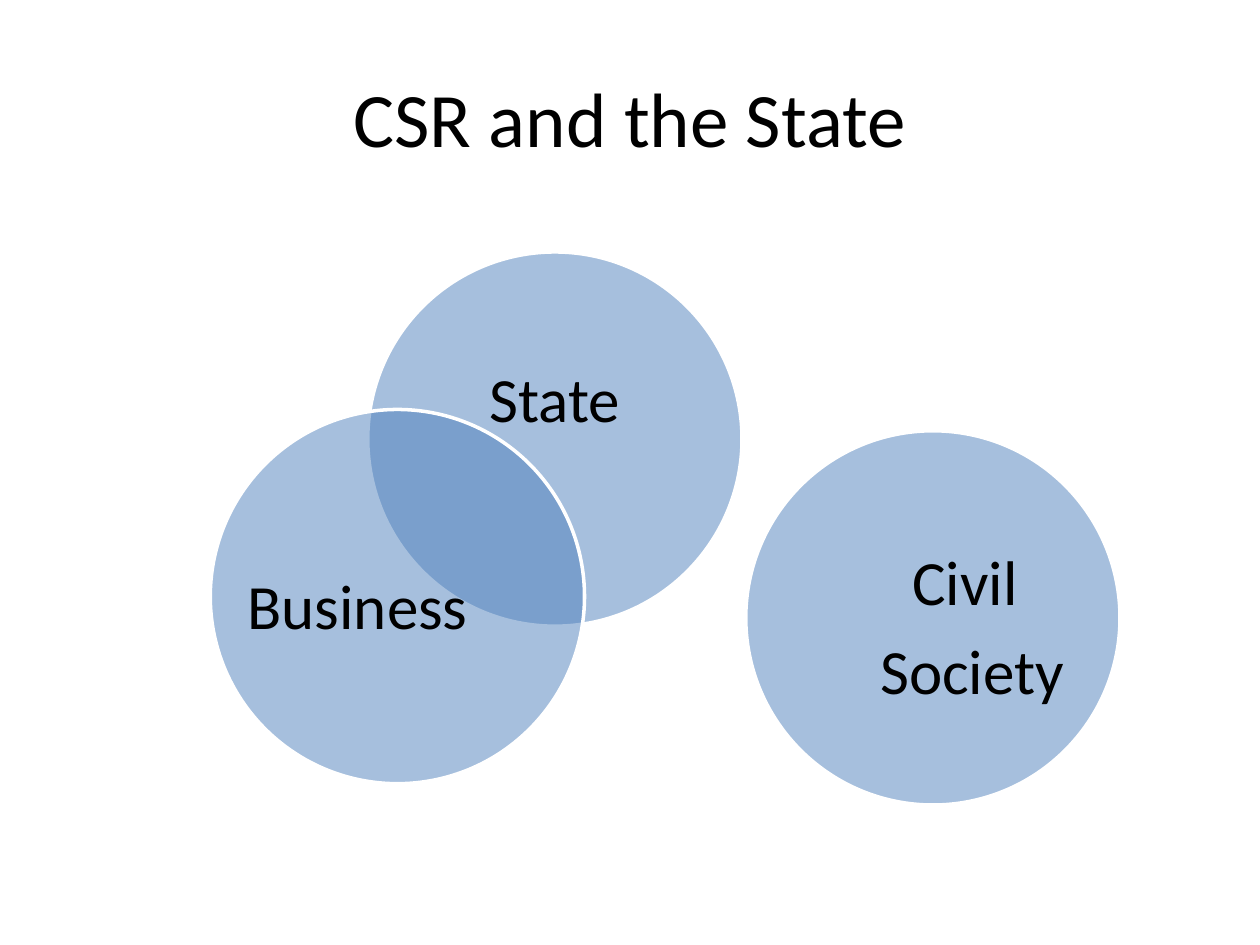
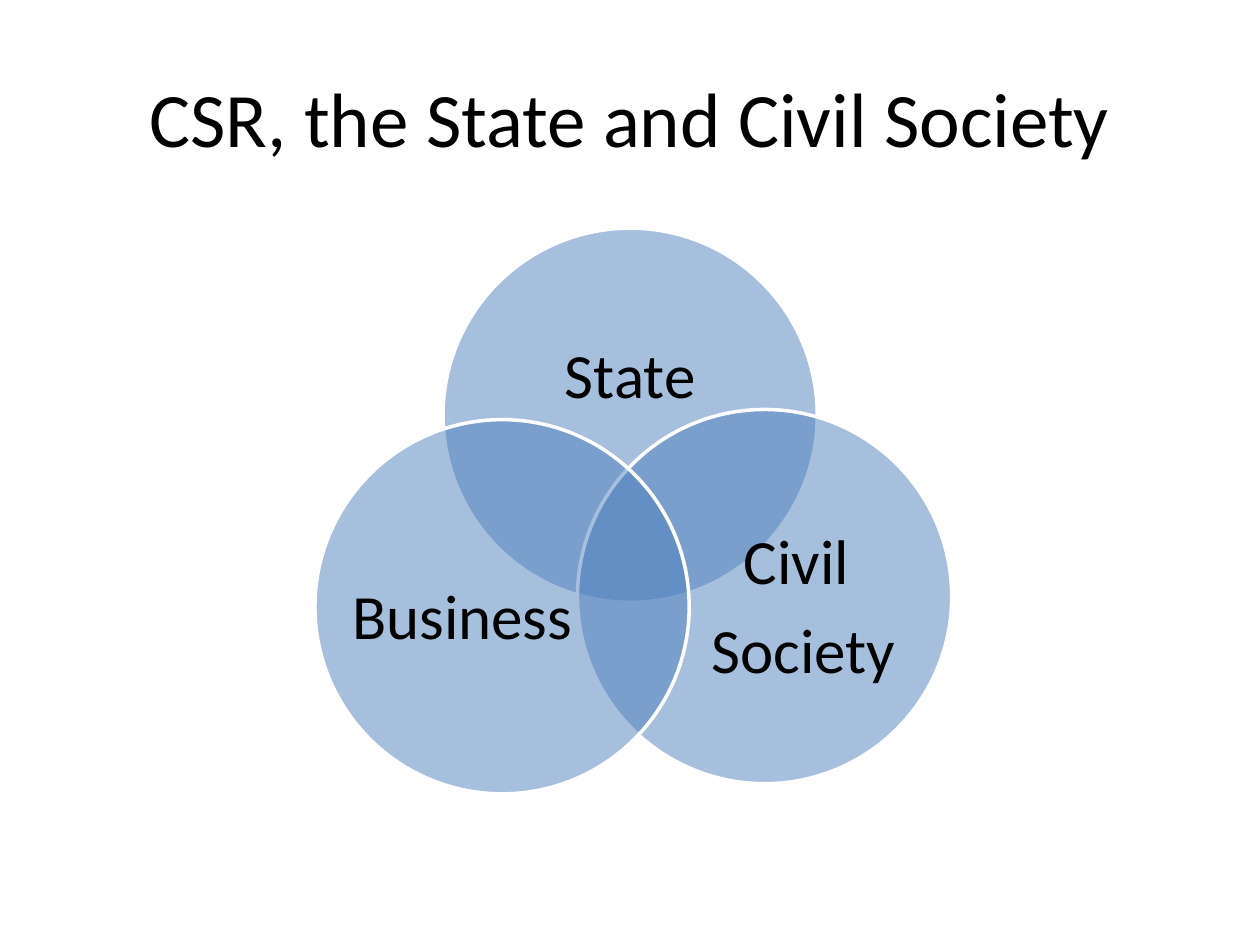
"""Builds two slides that show how state, business and civil society overlap."""
from lxml import etree
from pptx import Presentation
from pptx import util as u
from pptx.dml.color import RGBColor
from pptx.enum import shapes, text
from pptx.oxml.ns import qn

COLOURS = {"circle": "4F81BD", "outline": "FFFFFF", "text": "000000"}
CIRCLE_SIZE = 213.84
OPACITY = 50
FRAME_FORMAT = {
    "word_wrap": True,
    "vertical_anchor": text.MSO_ANCHOR.MIDDLE,
    "margin_left": 0,
    "margin_top": 0,
    "margin_right": 0,
    "margin_bottom": 0,
}
LABEL_PARAGRAPH = {
    "alignment": text.PP_ALIGN.CENTER,
    "line_spacing": 0.9,
    "space_after": u.Pt(12),
}
TITLE_PARAGRAPH = {"alignment": text.PP_ALIGN.CENTER}
LABEL_FONT = {"name": "Calibri", "size": u.Pt(36)}
TITLE_FONT = {"name": "Calibri", "size": u.Pt(44)}

LABELS = {
    "State": {"lines": ["State"], "offset": (28.4, 37.5), "size": (157, 96.5)},
    "Civil Society": {"lines": ["Civil ", "Society"], "offset": (65.3, 55), "size": (128, 117.5)},
    "Business": {"lines": ["Business"], "offset": (20.2, 55.3), "size": (128, 117.5)},
}
SLIDES = [
    ("CSR and the State",
     {"State": (210.2, 144), "Civil Society": (426.2, 246.2), "Business": (120.2, 234)}),
    ("CSR, the State and Civil Society",
     {"State": (253.2, 130.4), "Civil Society": (330, 234), "Business": (180, 239.8)}),
]


def set_all(target, values):
    for name, value in values.items():
        setattr(target, name, value)


def write_lines(frame, lines, paragraph_format, font_format):
    set_all(frame, FRAME_FORMAT)
    frame.text = "\n".join(lines)
    for paragraph in frame.paragraphs:
        set_all(paragraph, paragraph_format)
        for run in paragraph.runs:
            set_all(run.font, font_format)
            run.font.color.rgb = RGBColor.from_string(COLOURS["text"])


presentation = Presentation()
presentation.slide_width, presentation.slide_height = u.Pt(720), u.Pt(540)
title_only = presentation.slide_layouts[5]

for heading, circles in SLIDES:
    slide = presentation.slides.add_slide(title_only)
    title = slide.shapes.title
    set_all(title, {"left": u.Pt(36), "top": u.Pt(21.6),
                    "width": u.Pt(648), "height": u.Pt(90)})
    write_lines(title.text_frame, [heading], TITLE_PARAGRAPH, TITLE_FONT)

    for name, (left, top) in circles.items():
        circle = slide.shapes.add_shape(
            shapes.MSO_SHAPE.OVAL, u.Pt(left), u.Pt(top), u.Pt(CIRCLE_SIZE), u.Pt(CIRCLE_SIZE))
        circle.shadow.inherit = False
        circle.fill.solid()
        circle.fill.fore_color.rgb = RGBColor.from_string(COLOURS["circle"])
        fill_colour = circle._element.spPr.find(qn("a:solidFill"))[0]
        etree.SubElement(fill_colour, qn("a:alpha"), val=str(OPACITY * 1000))
        circle.line.color.rgb = RGBColor.from_string(COLOURS["outline"])
        circle.line.width = u.Pt(2)

        label = LABELS[name]
        (shift_x, shift_y), (width, height) = label["offset"], label["size"]
        label_box = slide.shapes.add_textbox(
            u.Pt(left + shift_x), u.Pt(top + shift_y), u.Pt(width), u.Pt(height))
        write_lines(label_box.text_frame, label["lines"], LABEL_PARAGRAPH, LABEL_FONT)

presentation.save("out.pptx")
